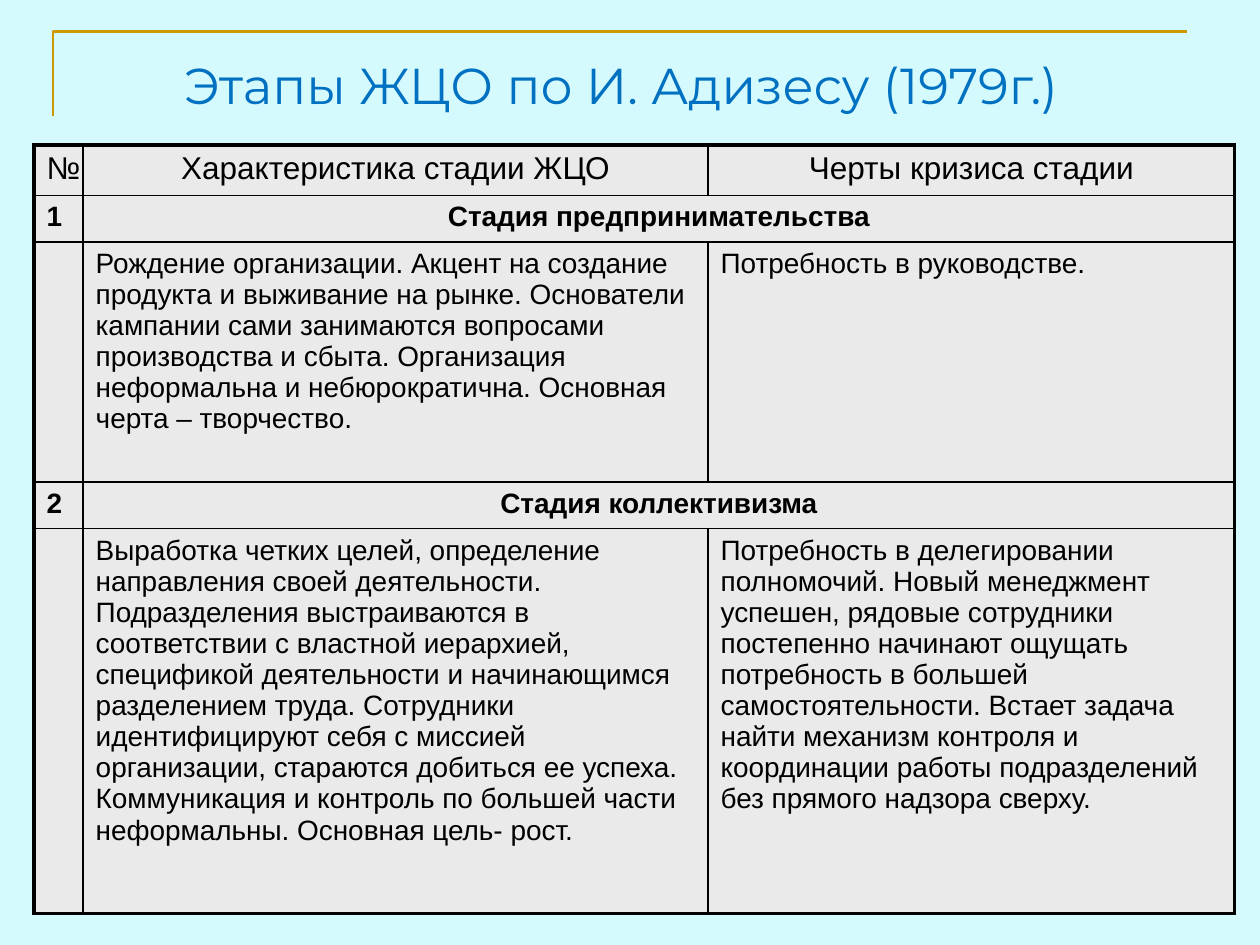
from dataclasses import dataclass

import lxml.etree
import pptx
import pptx.dml.color
import pptx.enum.text
import pptx.oxml.ns
import pptx.util

Inches = pptx.util.Inches
Pt = pptx.util.Pt
ALIGN = pptx.enum.text.PP_ALIGN
ANCHOR = pptx.enum.text.MSO_ANCHOR


@dataclass(frozen=True)
class Theme:
    background: str = "D4FAFE"
    accent: str = "CC9900"
    title: str = "0070C0"
    text: str = "000000"
    cell: str = "EAEAEA"
    border: str = "000000"
    title_font: str = "Montserrat"
    body_font: str = "Arial"
    title_size: float = 28.8
    header_size: float = 18
    body_size: float = 16
    outer_line: float = 2.25
    inner_line: float = 1


THEME = Theme()

HEADERS = ("№", "Характеристика стадии ЖЦО", "Черты кризиса стадии")
STAGES = (
    (
        "Стадия предпринимательства",
        "Рождение организации. Акцент на создание продукта и выживание на рынке. "
        "Основатели кампании сами занимаются вопросами производства и сбыта. "
        "Организация неформальна и небюрократична. Основная черта – творчество.",
        "Потребность в руководстве.",
    ),
    (
        "Стадия коллективизма",
        "Выработка четких целей, определение направления своей деятельности. "
        "Подразделения выстраиваются в соответствии с властной иерархией, "
        "спецификой деятельности и начинающимся разделением труда. Сотрудники "
        "идентифицируют себя с миссией организации, стараются добиться ее успеха. "
        "Коммуникация и контроль по большей части неформальны. Основная цель- рост.",
        "Потребность в делегировании полномочий. Новый менеджмент успешен, рядовые "
        "сотрудники постепенно начинают ощущать потребность в большей "
        "самостоятельности. Встает задача найти механизм контроля и координации "
        "работы подразделений без прямого надзора сверху.",
    ),
)
COLUMN_WIDTHS = (0.39, 4.96, 4.18)
HEADER_HEIGHT = 0.4
STAGE_HEIGHT = 0.37
DETAIL_HEIGHTS = (1.91, 3.06)


def rgb(value):
    return pptx.dml.color.RGBColor.from_string(value)


def write(frame, text, size=THEME.body_size, font=THEME.body_font,
          color=THEME.text, bold=False, align=ALIGN.LEFT):
    paragraph = frame.paragraphs[0]
    paragraph.alignment = align
    run = paragraph.add_run()
    run.text = text
    run.font.size = Pt(size)
    run.font.name = font
    run.font.bold = bold
    run.font.color.rgb = rgb(color)


def add_corner_rule(slide, left, top, width, height):
    """Draw the open corner: up the left side, then along the top."""
    builder = slide.shapes.build_freeform(Inches(left), Inches(top + height))
    builder.add_line_segments(
        [(Inches(left), Inches(top)), (Inches(left + width), Inches(top))],
        close=False)
    rule = builder.convert_to_shape()
    rule.shadow.inherit = False
    rule.fill.background()
    rule.line.color.rgb = rgb(THEME.accent)
    rule.line.width = Pt(1.5)


def add_title(slide, left, top, width, height):
    title = slide.shapes.add_textbox(
        Inches(left), Inches(top), Inches(width), Inches(height))
    frame = title.text_frame
    frame.word_wrap = True
    frame.vertical_anchor = ANCHOR.BOTTOM
    frame.margin_left = frame.margin_right = 0
    frame.margin_top = frame.margin_bottom = 0
    write(frame, "Этапы ЖЦО по И. Адизесу (1979г.)", size=THEME.title_size,
          font=THEME.title_font, color=THEME.title, align=ALIGN.CENTER)


def set_borders(cell, outer_sides):
    """Rule all four sides, thicker on those at the table's edge."""
    properties = cell._tc.get_or_add_tcPr()
    qn = pptx.oxml.ns.qn
    for position, side in enumerate("LRTB"):
        width = THEME.outer_line if side in outer_sides else THEME.inner_line
        line = lxml.etree.Element(qn(f"a:ln{side}"), w=str(Pt(width)))
        fill = lxml.etree.SubElement(line, qn("a:solidFill"))
        lxml.etree.SubElement(fill, qn("a:srgbClr"), val=THEME.border)
        properties.insert(position, line)


def style_cells(table):
    last_row, last_column = len(table.rows) - 1, len(table.columns) - 1
    for row in range(last_row + 1):
        for column in range(last_column + 1):
            cell = table.cell(row, column)
            cell.fill.solid()
            cell.fill.fore_color.rgb = rgb(THEME.cell)
            right = column + (cell.span_width - 1 if cell.is_merge_origin else 0)
            edges = (("L", column == 0), ("R", right == last_column),
                     ("T", row == 0), ("B", row == last_row))
            set_borders(cell, {side for side, is_outer in edges if is_outer})


def add_stage_table(slide, left, top, width, height):
    row_heights = [HEADER_HEIGHT]
    for detail_height in DETAIL_HEIGHTS:
        row_heights += [STAGE_HEIGHT, detail_height]
    frame = slide.shapes.add_table(
        len(row_heights), len(COLUMN_WIDTHS),
        Inches(left), Inches(top), Inches(width), Inches(height))
    table = frame.table
    table.first_row = table.horz_banding = False
    for column, share in zip(table.columns, COLUMN_WIDTHS):
        column.width = Inches(width * share / sum(COLUMN_WIDTHS))
    for row, share in zip(table.rows, row_heights):
        row.height = Inches(height * share / sum(row_heights))

    for column, header in enumerate(HEADERS):
        write(table.cell(0, column).text_frame, header, size=THEME.header_size,
              align=ALIGN.CENTER if column else ALIGN.LEFT)
    for number, (stage, character, crisis) in enumerate(STAGES, start=1):
        heading_row = 2 * number - 1
        heading = table.cell(heading_row, 1)
        heading.merge(table.cell(heading_row, 2))
        write(table.cell(heading_row, 0).text_frame, str(number), bold=True)
        write(heading.text_frame, stage, bold=True, align=ALIGN.CENTER)
        for column, detail in enumerate((character, crisis), start=1):
            write(table.cell(heading_row + 1, column).text_frame, detail)
    style_cells(table)


def main():
    deck = pptx.Presentation()
    deck.slide_width, deck.slide_height = Inches(10), Inches(7.5)
    slide = deck.slides.add_slide(deck.slide_layouts[6])
    slide.background.fill.solid()
    slide.background.fill.fore_color.rgb = rgb(THEME.background)
    add_corner_rule(slide, 0.42, 0.25, 9, 0.67)
    add_title(slide, 0.43, 0.36, 9, 0.55)
    add_stage_table(slide, 0.27, 1.15, 9.53, 6.1)
    deck.save("out.pptx")


if __name__ == "__main__":
    main()
